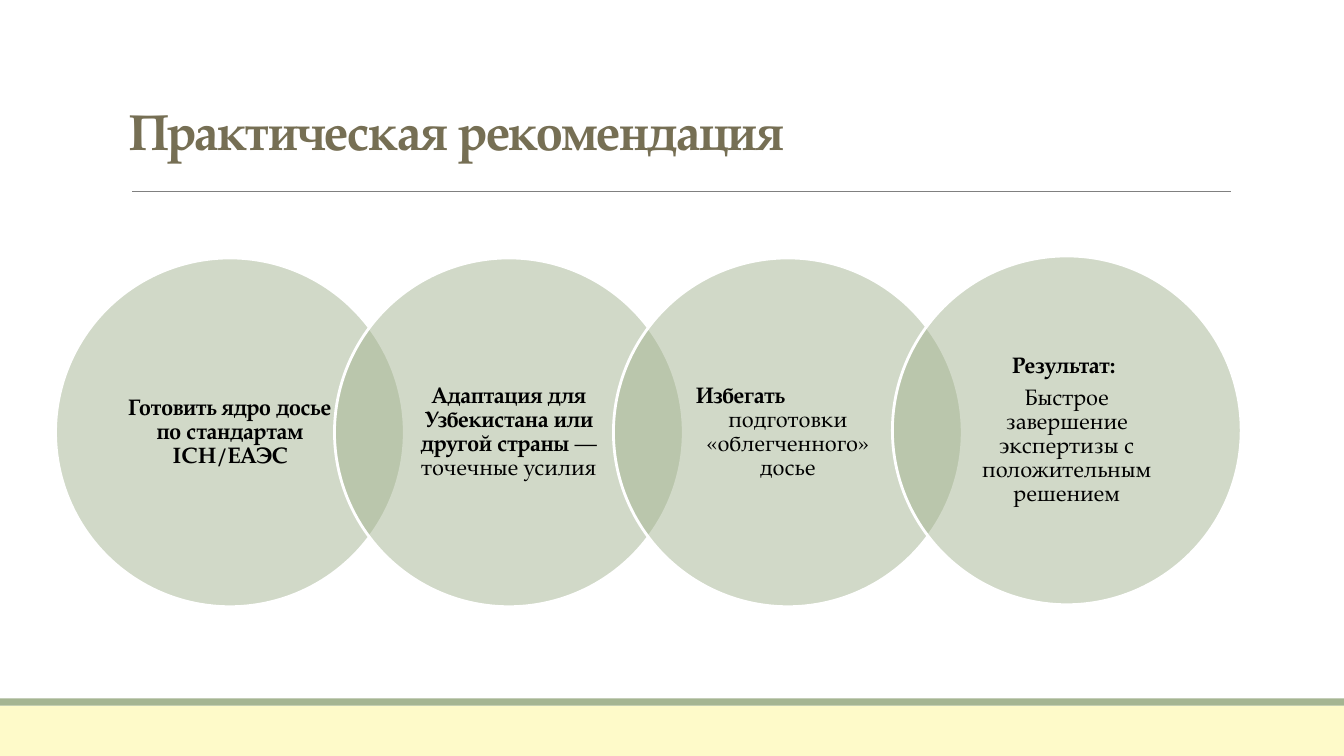
from lxml import etree
from pptx import Presentation
from pptx.dml.color import RGBColor
from pptx.enum.shapes import MSO_CONNECTOR, MSO_SHAPE
from pptx.enum.text import MSO_ANCHOR, PP_ALIGN
from pptx.oxml.ns import qn
from pptx.util import Cm, Pt

RECT, OVAL = MSO_SHAPE.RECTANGLE, MSO_SHAPE.OVAL
STRAIGHT = MSO_CONNECTOR.STRAIGHT
MIDDLE, BOTTOM = MSO_ANCHOR.MIDDLE, MSO_ANCHOR.BOTTOM
CENTER, LEFT = PP_ALIGN.CENTER, PP_ALIGN.LEFT

FONT = "TeX Gyre Pagella"
COLORS = {
    "green": "A5B592",
    "cream": "FEFAC9",
    "title": "766F54",
    "rule": "808080",
    "text": "000000",
    "outline": "FFFFFF",
}
WIDTH, HEIGHT = 33.87, 19.05
DIAMETER, PITCH, FIRST_LEFT = 8.79, 7.03, 1.4

# Each circle: top in cm, then paragraphs as (alignment, indent, space after, runs)
CIRCLES = [
    (6.5, [(CENTER, 0, 0, [("Готовить ядро досье по стандартам ICH/ЕАЭС", True)])]),
    (6.5, [(CENTER, 0, 0, [("Адаптация для Узбекистана или другой страны", True),
                           ("\u00a0— точечные усилия", False)])]),
    (6.5, [(LEFT, 0.32, 0, [("Избегать", True)]),
           (CENTER, 0, 0, [("подготовки «облегченного» досье", False)])]),
    (6.45, [(CENTER, 0, 5.6, [("Результат:\u00a0", True)]),
            (CENTER, 0, 0, [("Быстрое завершение экспертизы с положительным решением",
                             False)])]),
]


def rgb(name):
    return RGBColor.from_string(COLORS[name])


def style_font(font, size, color):
    font.name = FONT
    font.size = Pt(size)
    font.color.rgb = rgb(color)


def add_filled(s, kind, left, top, width, height, color):
    sp = s.shapes.add_shape(kind, Cm(left), Cm(top), Cm(width), Cm(height))
    sp.shadow.inherit = False
    sp.fill.solid()
    sp.fill.fore_color.rgb = rgb(color)
    sp.line.fill.background()
    return sp


def add_rule(s, left, right, y):
    line = s.shapes.add_connector(STRAIGHT, Cm(left), Cm(y), Cm(right), Cm(y))
    line.line.color.rgb = rgb("rule")
    line.line.width = Pt(0.5)
    etree.SubElement(line._element.spPr, qn("a:effectLst"))


def add_title(s, text):
    tf = s.shapes.add_textbox(Cm(3.02), Cm(0.13), Cm(29.87), Cm(4.04)).text_frame
    tf.word_wrap = True
    tf.vertical_anchor = BOTTOM
    p = tf.paragraphs[0]
    p.line_spacing = 0.85
    r = p.add_run()
    r.text = text
    style_font(p.font, 36, "title")
    p.font.bold = True
    r._r.get_or_add_rPr().set("spc", "-50")


def add_circle(s, left, top, paragraphs):
    sp = add_filled(s, OVAL, left, top, DIAMETER, DIAMETER, "green")
    color = sp._element.spPr.find(qn("a:solidFill"))[0]
    etree.SubElement(color, qn("a:alpha"), val="50000")
    sp.line.color.rgb = rgb("outline")
    sp.line.width = Pt(2)
    tf = sp.text_frame
    tf.word_wrap = True
    tf.vertical_anchor = MIDDLE
    tf.margin_left = tf.margin_right = Cm(0.48)
    tf.margin_top = tf.margin_bottom = Cm(0.05)
    for i, (align, indent, after, runs) in enumerate(paragraphs):
        p = tf.add_paragraph() if i else tf.paragraphs[0]
        p.alignment = align
        p.line_spacing = 0.9
        p.space_after = Pt(after)
        p._p.get_or_add_pPr().set("marL", str(Cm(indent)))
        style_font(p.font, 16, "text")
        for text, bold in runs:
            r = p.add_run()
            r.text = text
            r.font.bold = bold


def main():
    prs = Presentation()
    prs.slide_width, prs.slide_height = Cm(WIDTH), Cm(HEIGHT)
    s = prs.slides.add_slide(prs.slide_layouts[6])
    add_filled(s, RECT, 0, 17.78, WIDTH, 1.27, "cream")
    add_filled(s, RECT, 0, 17.6, WIDTH, 0.18, "green")
    add_rule(s, 3.33, 31.01, 4.82)
    add_title(s, "Практическая рекомендация")
    for i, (top, paragraphs) in enumerate(CIRCLES):
        add_circle(s, FIRST_LEFT + i * PITCH, top, paragraphs)
    prs.save("out.pptx")


if __name__ == "__main__":
    main()
